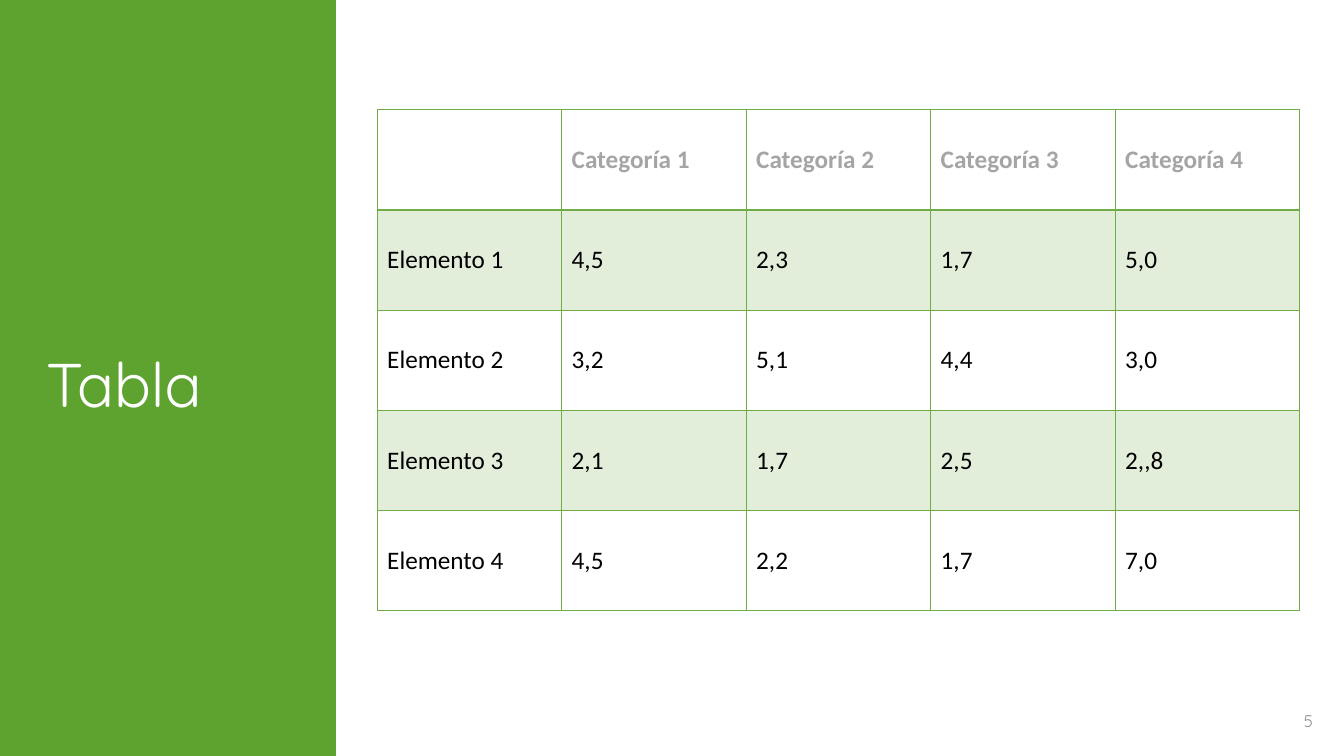
from dataclasses import dataclass

from lxml.etree import SubElement
from pptx import Presentation
from pptx.dml.color import RGBColor
from pptx.enum.shapes import MSO_SHAPE
from pptx.enum.text import MSO_ANCHOR, PP_ALIGN
from pptx.oxml.ns import qn
from pptx.slide import Slide
from pptx.table import _Cell
from pptx.util import Inches, Pt

# Slide size in inches
SLIDE_WIDTH, SLIDE_HEIGHT = 13.33, 7.5

PANEL_GREEN = RGBColor(0x5E, 0xA3, 0x30)
TABLE_GREEN = RGBColor(0x70, 0xAD, 0x47)
HEADER_GRAY = RGBColor(0xA5, 0xA5, 0xA5)
NUMBER_GRAY = RGBColor(0x8C, 0x8C, 0x8C)
BLACK = RGBColor(0, 0, 0)
WHITE = RGBColor(0xFF, 0xFF, 0xFF)

HEADING_FONT, TABLE_FONT = "Quicksand", "Calibri"
BAND_OPACITY = 20  # percent

ROWS = [
    ["", "Categoría 1", "Categoría 2", "Categoría 3", "Categoría 4"],
    ["Elemento 1", "4,5", "2,3", "1,7", "5,0"],
    ["Elemento 2", "3,2", "5,1", "4,4", "3,0"],
    ["Elemento 3", "2,1", "1,7", "2,5", "2,,8"],
    ["Elemento 4", "4,5", "2,2", "1,7", "7,0"],
]


@dataclass(frozen=True)
class Area:
    """A rectangle in percent of the slide's width and height."""
    left: float
    top: float
    width: float
    height: float

    def box(self) -> tuple[int, int, int, int]:
        across, down = SLIDE_WIDTH / 100, SLIDE_HEIGHT / 100
        return (Inches(self.left * across), Inches(self.top * down),
                Inches(self.width * across), Inches(self.height * down))


@dataclass(frozen=True)
class Label:
    text: str
    area: Area
    size: float
    color: RGBColor
    alignment: PP_ALIGN
    spacing: int = 0  # hundredths of a point


PANEL = Area(0, 0, 25, 100)
TABLE = Area(28.06, 14.53, 68.64, 66.27)
LABELS = [
    Label("Tabla", Area(2.7, 14.53, 19.58, 72.13), 44, WHITE, PP_ALIGN.LEFT, -20),
    Label("5", Area(93.25, 92.67, 5.18, 5.33), 12, NUMBER_GRAY, PP_ALIGN.RIGHT),
]


def draw_panel(slide: Slide, area: Area) -> None:
    panel = slide.shapes.add_shape(MSO_SHAPE.RECTANGLE, *area.box())
    panel.shadow.inherit = False
    panel.fill.solid()
    panel.fill.fore_color.rgb = PANEL_GREEN
    panel.line.fill.background()


def draw_label(slide: Slide, label: Label) -> None:
    frame = slide.shapes.add_textbox(*label.area.box()).text_frame
    frame.word_wrap = True
    frame.vertical_anchor = MSO_ANCHOR.MIDDLE
    paragraph = frame.paragraphs[0]
    paragraph.alignment = label.alignment
    paragraph.font.name = HEADING_FONT
    paragraph.font.size = Pt(label.size)
    paragraph.font.color.rgb = label.color
    run = paragraph.add_run()
    run.text = label.text
    if label.spacing:
        run.font._element.set("spc", str(label.spacing))


def set_borders(cell: _Cell, widths: dict[str, float]) -> None:
    properties = cell._tc.get_or_add_tcPr()
    for side, width in widths.items():
        line = SubElement(properties, qn(f"a:ln{side}"), w=str(Pt(width)))
        fill = SubElement(line, qn("a:solidFill"))
        SubElement(fill, qn("a:srgbClr"), val=str(TABLE_GREEN))


def fill_cell(cell: _Cell, banded: bool) -> None:
    cell.fill.solid()
    cell.fill.fore_color.rgb = TABLE_GREEN if banded else WHITE
    if banded:
        color = cell._tc.tcPr.find(qn("a:solidFill")).find(qn("a:srgbClr"))
        SubElement(color, qn("a:alpha"), val=str(BAND_OPACITY * 1000))


def write_cell(cell: _Cell, text: str, header: bool) -> None:
    cell.vertical_anchor = MSO_ANCHOR.MIDDLE
    paragraph = cell.text_frame.paragraphs[0]
    paragraph.text = text
    paragraph.font.name = TABLE_FONT
    paragraph.font.size = Pt(18)
    paragraph.font.bold = header
    paragraph.font.color.rgb = HEADER_GRAY if header else BLACK


def draw_table(slide: Slide, area: Area, rows: list[list[str]]) -> None:
    table = slide.shapes.add_table(len(rows), len(rows[0]), *area.box()).table
    table.first_row = False
    table.horz_banding = False
    for row_index, row in enumerate(rows):
        # The rule under the header is thicker than the others
        top = 2 if row_index == 1 else 1
        bottom = 2 if row_index == 0 else 1
        for column_index, text in enumerate(row):
            cell = table.cell(row_index, column_index)
            set_borders(cell, {"L": 1, "R": 1, "T": top, "B": bottom})
            fill_cell(cell, banded=row_index % 2 == 1)
            write_cell(cell, text, header=row_index == 0)


def main() -> None:
    presentation = Presentation()
    presentation.slide_width = Inches(SLIDE_WIDTH)
    presentation.slide_height = Inches(SLIDE_HEIGHT)
    slide = presentation.slides.add_slide(presentation.slide_layouts[6])

    # Side panel, table, then title and slide number
    draw_panel(slide, PANEL)
    draw_table(slide, TABLE, ROWS)
    for label in LABELS:
        draw_label(slide, label)

    presentation.save("out.pptx")


if __name__ == "__main__":
    main()
